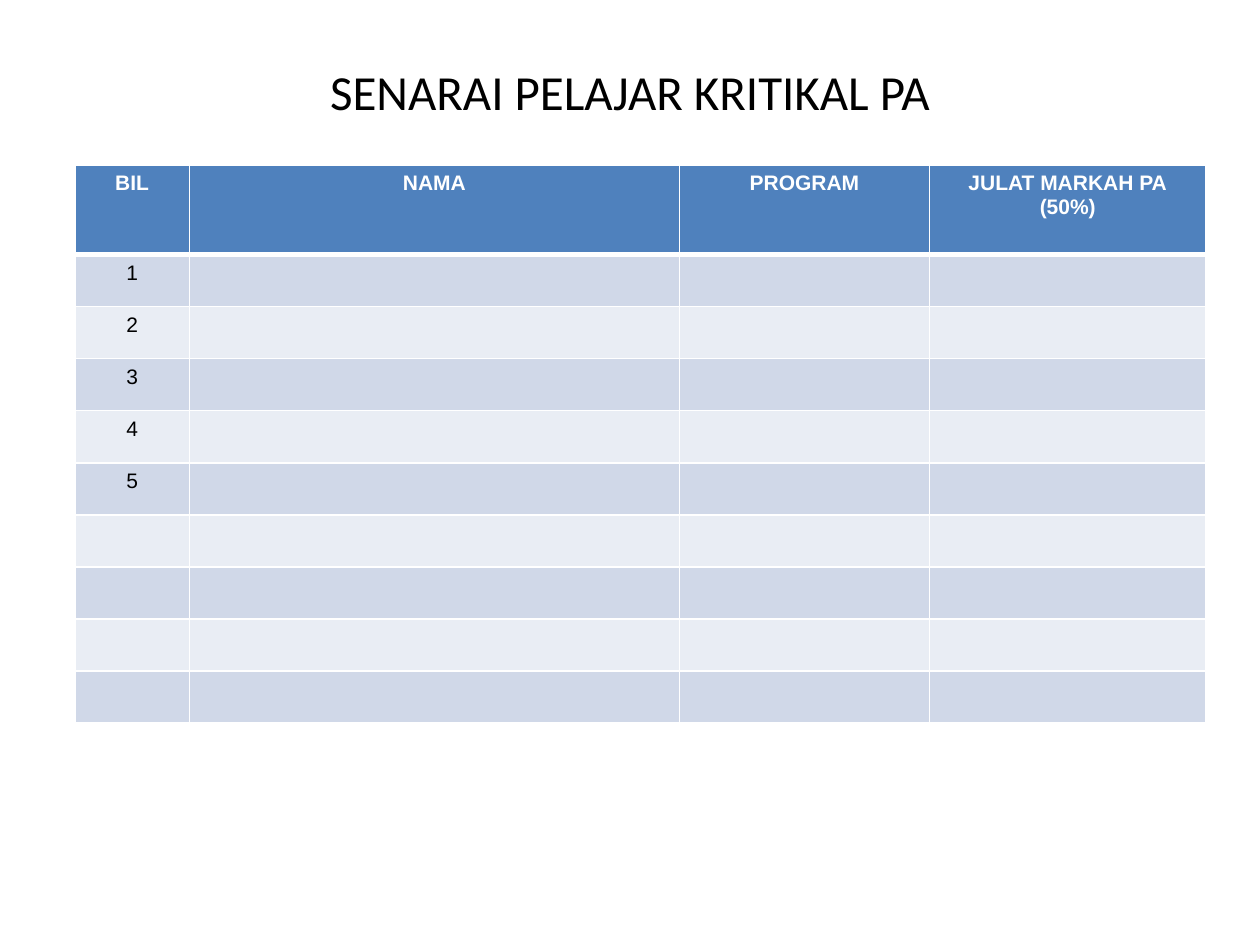
import pptx
import pptx.dml.color
import pptx.enum.text
import pptx.oxml
import pptx.oxml.ns
import pptx.util

Pt = pptx.util.Pt
CENTER = pptx.enum.text.PP_ALIGN.CENTER
MIDDLE = pptx.enum.text.MSO_ANCHOR.MIDDLE

WHITE, BLACK, BLUE = "FFFFFF", "000000", "4F81BD"
BANDS = ("D0D8E8", "E9EDF4")
HEADERS = ("BIL", "NAMA", "PROGRAM", "JULAT MARKAH PA\n(50%)")
NUMBERS = ("1", "2", "3", "4", "5")
COLUMN_WIDTHS = (65.5, 280, 143, 158)
HEADER_HEIGHT, ROW_HEIGHT, BODY_ROWS = 51, 29.75, 9


def rgb(color):
    return pptx.dml.color.RGBColor.from_string(color)


def write(tf, text, font, size, color, bold=False):
    for i, line in enumerate(text.split("\n")):
        p = tf.paragraphs[0] if i == 0 else tf.add_paragraph()
        p.alignment = CENTER
        r = p.add_run()
        r.text = line
        r.font.name = font
        r.font.size = Pt(size)
        r.font.bold = bold
        r.font.color.rgb = rgb(color)


def set_borders(cell, color, **widths):
    tc_pr = cell._tc.get_or_add_tcPr()
    for side, width in widths.items():
        tc_pr.append(pptx.oxml.parse_xml(
            f'<a:ln{side} {pptx.oxml.ns.nsdecls("a")} w="{Pt(width)}">'
            f'<a:solidFill><a:srgbClr val="{color}"/></a:solidFill></a:ln{side}>'))


def format_cell(cell, fill, top, bottom):
    set_borders(cell, WHITE, L=1, R=1, T=top, B=bottom)
    cell.fill.solid()
    cell.fill.fore_color.rgb = rgb(fill)


def add_title(s, text):
    sp = s.shapes.title
    sp.left, sp.top, sp.width, sp.height = Pt(36), Pt(21.6), Pt(648), Pt(61.2)
    sp.text_frame.vertical_anchor = MIDDLE
    write(sp.text_frame, text, "Calibri", 28, BLACK)


def add_student_table(s):
    table = s.shapes.add_table(
        BODY_ROWS + 1, len(HEADERS), Pt(42.75), Pt(94.5),
        Pt(sum(COLUMN_WIDTHS)), Pt(HEADER_HEIGHT + BODY_ROWS * ROW_HEIGHT)).table
    for column, width in zip(table.columns, COLUMN_WIDTHS):
        column.width = Pt(width)
    for i, row in enumerate(table.rows):
        row.height = Pt(ROW_HEIGHT if i else HEADER_HEIGHT)
        fill = BANDS[(i - 1) % 2] if i else BLUE
        for cell in row.cells:
            format_cell(cell, fill, 3 if i == 1 else 1, 1 if i else 3)
    for j, header in enumerate(HEADERS):
        write(table.cell(0, j).text_frame, header, "Arial", 12, WHITE, True)
    for i, number in enumerate(NUMBERS, 1):
        write(table.cell(i, 0).text_frame, number, "Arial", 12, BLACK)


def main():
    prs = pptx.Presentation()
    prs.slide_width, prs.slide_height = Pt(720), Pt(540)
    s = prs.slides.add_slide(prs.slide_layouts[5])
    add_student_table(s)
    add_title(s, "SENARAI PELAJAR KRITIKAL PA")
    prs.save("out.pptx")


if __name__ == "__main__":
    main()
